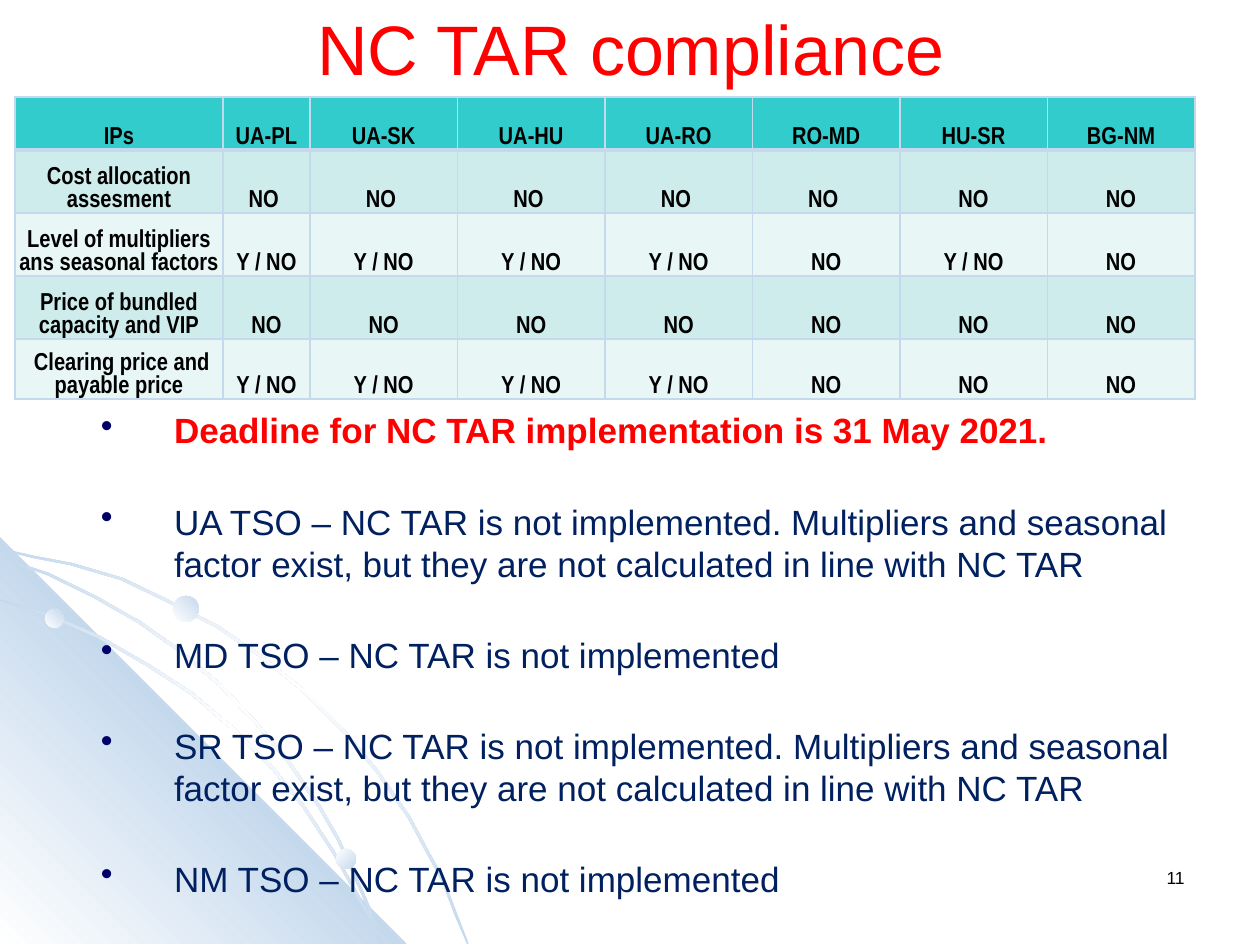
import copy
import dataclasses

import lxml.etree
import pptx
import pptx.dml.color
import pptx.enum.shapes
import pptx.enum.text
import pptx.oxml.ns
import pptx.util


@dataclasses.dataclass(frozen=True)
class Theme:
    red: str = "FF0000"
    navy: str = "002060"
    bullet: str = "000066"
    black: str = "000000"
    white: str = "FFFFFF"
    mist: str = "C5D9ED"
    header: str = "33CCCC"
    bands: tuple = ("E8F6F6", "CEECEC")
    font: str = "Arial"
    narrow: str = "Arial Narrow"
    title_size: int = 40
    body_size: int = 20
    table_size: int = 14
    number_size: int = 10


THEME = Theme()
EMU_PER_PX = 914400 / 126
SLIDE_SIZE = (1260, 945)
TITLE = "NC TAR compliance"
PAGE_NUMBER = "11"

COMPLIANCE = [
    ["IPs", "UA-PL", "UA-SK", "UA-HU", "UA-RO", "RO-MD", "HU-SR", "BG-NM"],
    ["Cost allocation assesment"] + ["NO "] * 5 + ["NO"] * 2,
    ["Level of multipliers ans seasonal factors"] + ["Y / NO"] * 4 + ["NO", "Y / NO", "NO"],
    ["Price of bundled capacity and VIP"] + ["NO"] * 7,
    [" Clearing price and payable price"] + ["Y / NO"] * 4 + ["NO"] * 3,
]
COLUMN_WIDTHS = [208, 87] + [885 / 6] * 6
ROW_HEIGHTS = [53, 63, 63, 63, 52]

NOT_IMPLEMENTED = "NC TAR is not implemented"
MULTIPLIERS = (". Multipliers and seasonal factor exist, "
               "but they are not calculated in line with NC TAR")
DEADLINE = "Deadline for NC TAR implementation is 31 May 2021."
OPERATORS = [("UA", MULTIPLIERS), ("MD", ""), ("SR", MULTIPLIERS), ("NM", "")]

OUTER_ARC = [(0, 548), (35, 556), (72, 563), (123, 578), (171, 601), (219, 626),
             (263, 656), (305, 690), (343, 728), (378, 770), (410, 816),
             (427, 848), (444, 879), (456, 911), (469, 944)]
LOWER_ARC = [(0, 599), (52, 615), (100, 636), (147, 663), (192, 692), (232, 726),
             (271, 764), (305, 806), (335, 852), (360, 897), (373, 920), (382, 944)]
MIDDLE_ARC = [(0, 557), (49, 573), (96, 596), (140, 621), (181, 650), (221, 684),
              (257, 722), (289, 760), (320, 805), (339, 838), (355, 873),
              (370, 907), (382, 944)]
CORNER = [(406, 944), (0, 944), (0, 538)]
BEADS = [(45, 609, 19, 45), (336, 849, 20, 315), (173, 596, 26, 45)]
ARC_COLORS = (THEME.mist, THEME.white, THEME.mist)
CORNER_COLORS = (THEME.white, THEME.mist, THEME.white)


def px(length):
    return pptx.util.Emu(round(length * EMU_PER_PX))


def rgb(value):
    return pptx.dml.color.RGBColor.from_string(value)


def assign(target, values):
    for name, value in values.items():
        setattr(target, name, value)


def shade(shape, colors, angle):
    shape.shadow.inherit = False
    shape.line.fill.background()
    shape.fill.gradient()
    shape.fill.gradient_angle = angle
    stops = shape.element.spPr.find(".//" + pptx.oxml.ns.qn("a:gsLst"))
    for extra in colors[2:]:
        stops.append(copy.deepcopy(stops[-1]))
    for index, (stop, color) in enumerate(zip(shape.fill.gradient_stops, colors)):
        stop.color.rgb = rgb(color)
        stop.position = index / (len(colors) - 1)


def add_outline(slide, points, colors, angle):
    builder = slide.shapes.build_freeform(*points[0], scale=EMU_PER_PX)
    builder.add_line_segments(points[1:], close=True)
    shade(builder.convert_to_shape(), colors, angle)


def add_arc(slide, upper):
    lower = [(max(x - 2, 0), min(y + 2, 944)) for x, y in upper]
    add_outline(slide, upper + lower[::-1], ARC_COLORS, 315)


def write(paragraph, text, size, color, font=THEME.font, bold=False, align="LEFT"):
    paragraph.alignment = getattr(pptx.enum.text.PP_ALIGN, align)
    run = paragraph.add_run()
    run.text = text
    assign(run.font, {"name": font, "size": pptx.util.Pt(size), "bold": bold})
    run.font.color.rgb = rgb(color)


def add_text_frame(slide, box, **values):
    frame = slide.shapes.add_textbox(*map(px, box)).text_frame
    assign(frame, {"word_wrap": True, **values})
    return frame


def add_bullet(paragraph):
    properties = paragraph._p.get_or_add_pPr()
    properties.set("marL", str(px(136)))
    properties.set("indent", str(px(-73)))
    color = lxml.etree.SubElement(properties, pptx.oxml.ns.qn("a:buClr"))
    lxml.etree.SubElement(color, pptx.oxml.ns.qn("a:srgbClr"), val=THEME.bullet)
    lxml.etree.SubElement(properties, pptx.oxml.ns.qn("a:buChar"), char="•")


def add_border(cell, side, points):
    line = lxml.etree.SubElement(cell._tc.get_or_add_tcPr(), pptx.oxml.ns.qn("a:ln" + side),
                                 w=str(pptx.util.Pt(points)))
    fill = lxml.etree.SubElement(line, pptx.oxml.ns.qn("a:solidFill"))
    lxml.etree.SubElement(fill, pptx.oxml.ns.qn("a:srgbClr"), val=THEME.mist)


def add_compliance_table(slide):
    size = (sum(COLUMN_WIDTHS), sum(ROW_HEIGHTS))
    table = slide.shapes.add_table(len(COMPLIANCE), len(COLUMN_WIDTHS),
                                   *map(px, (15, 97, *size))).table
    for column, width in zip(table.columns, COLUMN_WIDTHS):
        column.width = px(width)
    for row, height in zip(table.rows, ROW_HEIGHTS):
        row.height = px(height)
    for row_index, entries in enumerate(COMPLIANCE):
        background = THEME.bands[row_index % 2] if row_index else THEME.header
        edges = {"L": 1, "R": 1, "T": 3 if row_index == 1 else 1,
                 "B": 3 if row_index == 0 else 1}
        for column_index, entry in enumerate(entries):
            cell = table.cell(row_index, column_index)
            assign(cell, {"margin_left": px(1), "margin_right": px(1),
                          "margin_top": px(1), "margin_bottom": 0,
                          "vertical_anchor": pptx.enum.text.MSO_ANCHOR.BOTTOM})
            for side, points in edges.items():
                add_border(cell, side, points)
            cell.fill.solid()
            cell.fill.fore_color.rgb = rgb(background)
            write(cell.text_frame.paragraphs[0], entry, THEME.table_size,
                  THEME.black, THEME.narrow, True, "CENTER")


def add_findings(slide):
    frame = add_text_frame(slide, (38, 409, 1175, 490), margin_left=0,
                           margin_right=0, margin_top=0, margin_bottom=0)
    findings = [(DEADLINE, THEME.red, True)]
    findings += [(f"{country} TSO – {NOT_IMPLEMENTED}{detail}", THEME.navy, False)
                 for country, detail in OPERATORS]
    for index, (text, color, bold) in enumerate(findings):
        paragraph = frame.add_paragraph() if index else frame.paragraphs[0]
        assign(paragraph, {"line_spacing": pptx.util.Pt(24), "space_after": pptx.util.Pt(28)})
        add_bullet(paragraph)
        write(paragraph, text, THEME.body_size, color, bold=bold)


def main():
    deck = pptx.Presentation()
    assign(deck, dict(zip(("slide_width", "slide_height"), map(px, SLIDE_SIZE))))
    slide = deck.slides.add_slide(deck.slide_layouts[6])
    add_arc(slide, OUTER_ARC)
    add_outline(slide, CORNER, CORNER_COLORS, 45)
    add_arc(slide, LOWER_ARC)
    add_arc(slide, MIDDLE_ARC)
    for left, top, diameter, angle in BEADS:
        bead = slide.shapes.add_shape(pptx.enum.shapes.MSO_SHAPE.OVAL,
                                      *map(px, (left, top, diameter, diameter)))
        shade(bead, (THEME.white, THEME.mist), angle)
    number = add_text_frame(slide, (903, 861, 294, 63))
    write(number.paragraphs[0], PAGE_NUMBER, THEME.number_size, THEME.black, align="RIGHT")
    title = add_text_frame(slide, (35, 0, 1191, 96),
                           vertical_anchor=pptx.enum.text.MSO_ANCHOR.MIDDLE)
    write(title.paragraphs[0], TITLE, THEME.title_size, THEME.red, align="CENTER")
    add_findings(slide)
    add_compliance_table(slide)
    deck.save("out.pptx")


if __name__ == "__main__":
    main()
